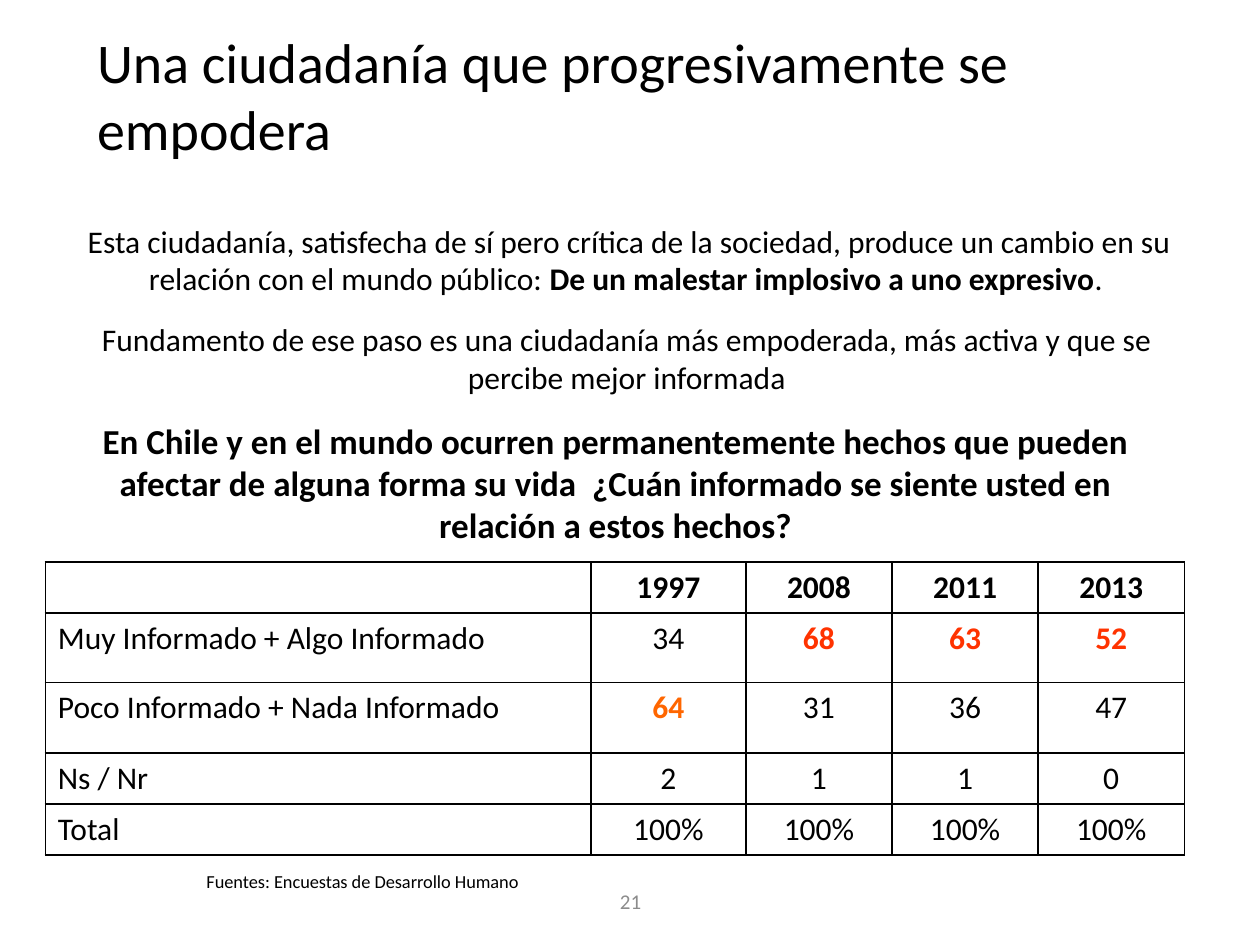
from lxml import etree
from pptx import Presentation
from pptx.dml.color import RGBColor
from pptx.enum import text as t
from pptx.oxml.ns import qn
from pptx.util import Inches, Pt

HUE = {"ink": "000000", "paper": "FFFFFF", "gray": "8C8C8C", "red": "FF3300", "orange": "FF6600"}
MID, LEFT = t.PP_ALIGN.CENTER, t.PP_ALIGN.LEFT

TITLE = "Una ciudadanía que progresivamente se empodera"
NOTES = [
    ((0.43, 1.71, 9.13, 0.71), 18, "ink", MID, [
        ("Esta ciudadanía, satisfecha de sí pero crítica de la sociedad, produce un cambio "
         "en su relación con el mundo público: ", False),
        ("De un malestar implosivo a uno expresivo", True),
        (". ", False)]),
    ((0.41, 2.49, 9.13, 0.71), 18, "ink", MID, [
        ("Fundamento de ese paso es una ciudadanía más empoderada, más activa y que se "
         "percibe mejor informada", False)]),
    ((0.67, 3.28, 8.43, 1.41), 20, "ink", MID, [
        ("En Chile y en el mundo ocurren permanentemente hechos que pueden afectar de alguna "
         "forma su vida  ¿Cuán informado se siente usted en relación a estos hechos?", True)]),
    ((1.54, 6.86, 6.08, 0.28), 10.5, "ink", LEFT, [
        ("Fuentes: Encuestas de Desarrollo Humano", False)]),
    ((3.42, 6.95, 3.17, 0.4), 12, "gray", MID, [("21", False)]),
]
DATA = [
    ("", "1997", "2008", "2011", "2013"),
    ("Muy Informado + Algo Informado", "34", "68", "63", "52"),
    ("Poco Informado + Nada Informado", "64", "31", "36", "47"),
    ("Ns / Nr", "2", "1", "1", "0"),
    ("Total", "100%", "100%", "100%", "100%"),
]
MARKS = {(1, 2): "red", (1, 3): "red", (1, 4): "red", (2, 1): "orange"}
COLS = [4.33, 1.23, 1.16, 1.16, 1.16]
ROWS = [0.4, 0.55, 0.56, 0.4, 0.4]


def color(name):
    return RGBColor.from_string(HUE[name])


def write(frame, runs, size, hue, align):
    para = frame.paragraphs[0]
    para.alignment = align
    for words, bold in runs:
        run = para.add_run()
        run.text = words
        for key, value in {"name": "Calibri", "size": Pt(size), "bold": bold}.items():
            setattr(run.font, key, value)
        run.font.color.rgb = color(hue)


def place(shape, box):
    for key, value in zip(("left", "top", "width", "height"), box):
        setattr(shape, key, Inches(value))


def border(cell):
    props = cell._tc.get_or_add_tcPr()
    for spot, side in enumerate(("lnL", "lnR", "lnT", "lnB")):
        line = etree.Element(qn("a:" + side), w=str(Pt(1)))
        fill = etree.SubElement(line, qn("a:solidFill"))
        etree.SubElement(fill, qn("a:srgbClr"), val=HUE["ink"])
        props.insert(spot, line)


def main():
    deck = Presentation()
    deck.slide_width, deck.slide_height = Inches(10), Inches(7.5)
    slide = deck.slides.add_slide(deck.slide_layouts[5])

    title = slide.shapes.title
    place(title, (0.67, 0.21, 8.58, 1.08))
    title.text_frame.vertical_anchor = t.MSO_ANCHOR.MIDDLE
    write(title.text_frame, [(TITLE, False)], 32, "ink", LEFT)

    box = [Inches(n) for n in (0.36, 4.46, sum(COLS), sum(ROWS))]
    table = slide.shapes.add_table(len(ROWS), len(COLS), *box).table
    for col, width in zip(table.columns, COLS):
        col.width = Inches(width)
    for row, height in zip(table.rows, ROWS):
        row.height = Inches(height)
    for r, line in enumerate(DATA):
        for c, words in enumerate(line):
            cell = table.cell(r, c)
            cell.fill.solid()
            cell.fill.fore_color.rgb = color("paper")
            border(cell)
            if words:
                bold = r == 0 or (r, c) in MARKS
                hue = MARKS.get((r, c), "ink")
                write(cell.text_frame, [(words, bold)], 18, hue, MID if c else LEFT)

    for box, size, hue, align, runs in NOTES:
        note = slide.shapes.add_textbox(*[Inches(n) for n in box])
        note.text_frame.word_wrap = True
        if hue == "gray":
            note.text_frame.vertical_anchor = t.MSO_ANCHOR.MIDDLE
        write(note.text_frame, runs, size, hue, align)

    deck.save("out.pptx")


if __name__ == "__main__":
    main()
